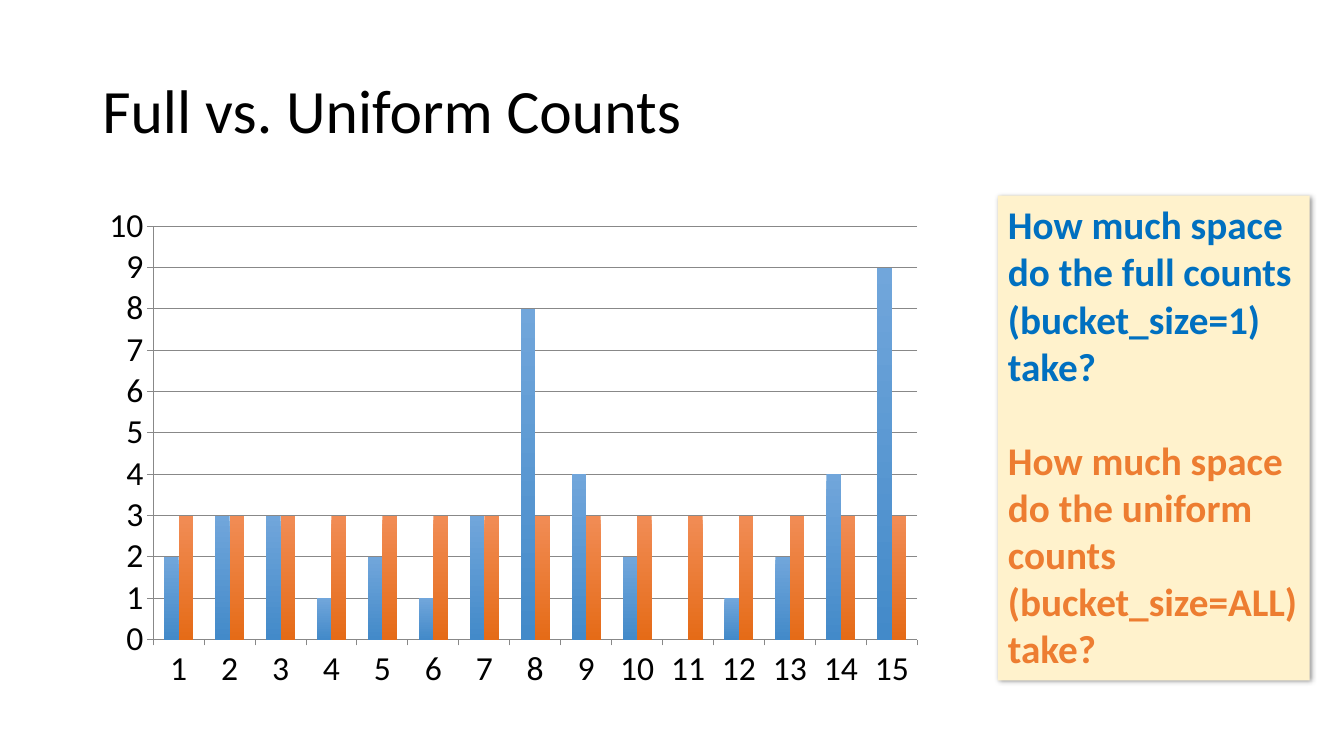
"""Build the slide comparing full and uniform counts."""
from dataclasses import dataclass

from lxml import etree
from pptx import Presentation
from pptx import util as u
from pptx.chart import data as chart_data
from pptx.dml import color
from pptx.enum import chart as chart_enum
from pptx.enum import shapes, text
from pptx.oxml import ns


@dataclass(frozen=True)
class Theme:
    font: str = "Calibri"
    ink: str = "000000"
    grid: str = "888888"
    panel: str = "FFF2CC"
    full: str = "0070C0"
    uniform: str = "ED7D31"
    full_bars: tuple = ("71A6DB", "438AC9")
    uniform_bars: tuple = ("F18C55", "E56B17")
    title_size: float = 44
    panel_size: float = 28
    chart_size: float = 24


def rgb(value):
    return color.RGBColor.from_string(value)


def style_font(font, name, size, ink, bold=False):
    font.name, font.size, font.bold = name, u.Pt(size), bold
    font.color.rgb = rgb(ink)


def write(paragraph, wording, *, name, size, ink, bold=False, before=0, line=1.0):
    paragraph.alignment = text.PP_ALIGN.LEFT
    paragraph.space_before = u.Pt(before)
    paragraph.line_spacing = line
    run = paragraph.add_run()
    run.text = wording
    style_font(run.font, name, size, ink, bold)


class SlideBuilder:
    COLUMNS, ROWS = 160, 90

    def __init__(self, presentation, theme):
        self.theme = theme
        self.column = presentation.slide_width / self.COLUMNS
        self.row = presentation.slide_height / self.ROWS
        self.slide = presentation.slides.add_slide(presentation.slide_layouts[6])

    def place(self, left, top, width, height):
        return (round(left * self.column), round(top * self.row),
                round(width * self.column), round(height * self.row))

    def title(self, wording, *area):
        frame = self.slide.shapes.add_textbox(*self.place(*area)).text_frame
        frame.word_wrap = True
        frame.vertical_anchor = text.MSO_ANCHOR.MIDDLE
        write(frame.paragraphs[0], wording, name=self.theme.font,
              size=self.theme.title_size, ink=self.theme.ink, line=0.9)

    def panel(self, questions, *area):
        shape = self.slide.shapes.add_shape(
            shapes.MSO_SHAPE.RECTANGLE, *self.place(*area))
        shape.fill.solid()
        shape.fill.fore_color.rgb = rgb(self.theme.panel)
        shape.line.fill.background()
        self.cast_shadow(shape)
        frame = shape.text_frame
        frame.word_wrap = True
        frame.vertical_anchor = text.MSO_ANCHOR.TOP
        size = self.theme.panel_size
        for index, (wording, ink) in enumerate(questions):
            paragraph = frame.add_paragraph() if index else frame.paragraphs[0]
            write(paragraph, wording, name=self.theme.font, size=size, ink=ink,
                  bold=True, before=1.2 * size if index else 0)

    def cast_shadow(self, shape):
        shape.shadow.inherit = False
        effects = shape.element.spPr.find(ns.qn("a:effectLst"))
        shadow = etree.SubElement(
            effects, ns.qn("a:outerShdw"), blurRad=str(u.Pt(4)),
            dist=str(u.Pt(1)), dir="2700000", algn="tl", rotWithShape="0")
        tint = etree.SubElement(shadow, ns.qn("a:srgbClr"), val=self.theme.ink)
        etree.SubElement(tint, ns.qn("a:alpha"), val="40000")

    def column_chart(self, categories, series, *area):
        counts = chart_data.CategoryChartData()
        counts.categories = categories
        for name, values, _ in series:
            counts.add_series(name, values)
        chart = self.slide.shapes.add_chart(
            chart_enum.XL_CHART_TYPE.COLUMN_CLUSTERED,
            *self.place(*area), counts).chart
        chart.has_legend = chart.has_title = False
        style_font(chart.font, self.theme.font, self.theme.chart_size, self.theme.ink)
        plot = chart.plots[0]
        plot.gap_width, plot.overlap, plot.vary_by_categories = 100, 0, False
        plot.gap_width = 150 if len(series) > 2 else plot.gap_width
        plot.gap_width = 150
        for bars, (_, _, shades) in zip(plot.series, series):
            self.shade(bars.format.fill, shades)
        for axis in (chart.category_axis, chart.value_axis):
            axis.major_tick_mark = chart_enum.XL_TICK_MARK.OUTSIDE
            axis.minor_tick_mark = chart_enum.XL_TICK_MARK.NONE
            self.rule(axis.format.line)
        scale = chart.value_axis
        scale.minimum_scale, scale.maximum_scale, scale.major_unit = 0, 10, 1
        scale.has_major_gridlines = True
        self.rule(scale.major_gridlines.format.line)

    def shade(self, fill, shades):
        fill.gradient()
        fill.gradient_angle = 270
        for stop, shade, position in zip(fill.gradient_stops, shades, (0, 1)):
            stop.color.rgb = rgb(shade)
            stop.position = position

    def rule(self, line):
        line.color.rgb = rgb(self.theme.grid)
        line.width = u.Pt(0.75)


def main():
    presentation = Presentation()
    presentation.slide_width = u.Inches(13.33)
    presentation.slide_height = u.Inches(7.5)
    theme = Theme()
    builder = SlideBuilder(presentation, theme)

    full_counts = (2, 3, 3, 1, 2, 1, 3, 8, 4, 2, 0, 1, 2, 4, 9)
    size = len(full_counts)
    uniform_counts = (sum(full_counts) // size,) * size
    builder.title("Full vs. Uniform Counts", 11, 4.8, 138, 17.4)
    builder.column_chart(
        [str(value) for value in range(1, size + 1)],
        [("Series 1", full_counts, theme.full_bars),
         ("Series 2", uniform_counts, theme.uniform_bars)],
        11, 23.3, 100.2, 60.1)
    builder.panel(
        [("How much space do the full counts (bucket_size=1) take?", theme.full),
         ("How much space do the uniform counts (bucket_size=ALL) take?", theme.uniform)],
        118.8, 23.3, 37.1, 57.7)
    presentation.save("out.pptx")


if __name__ == "__main__":
    main()
